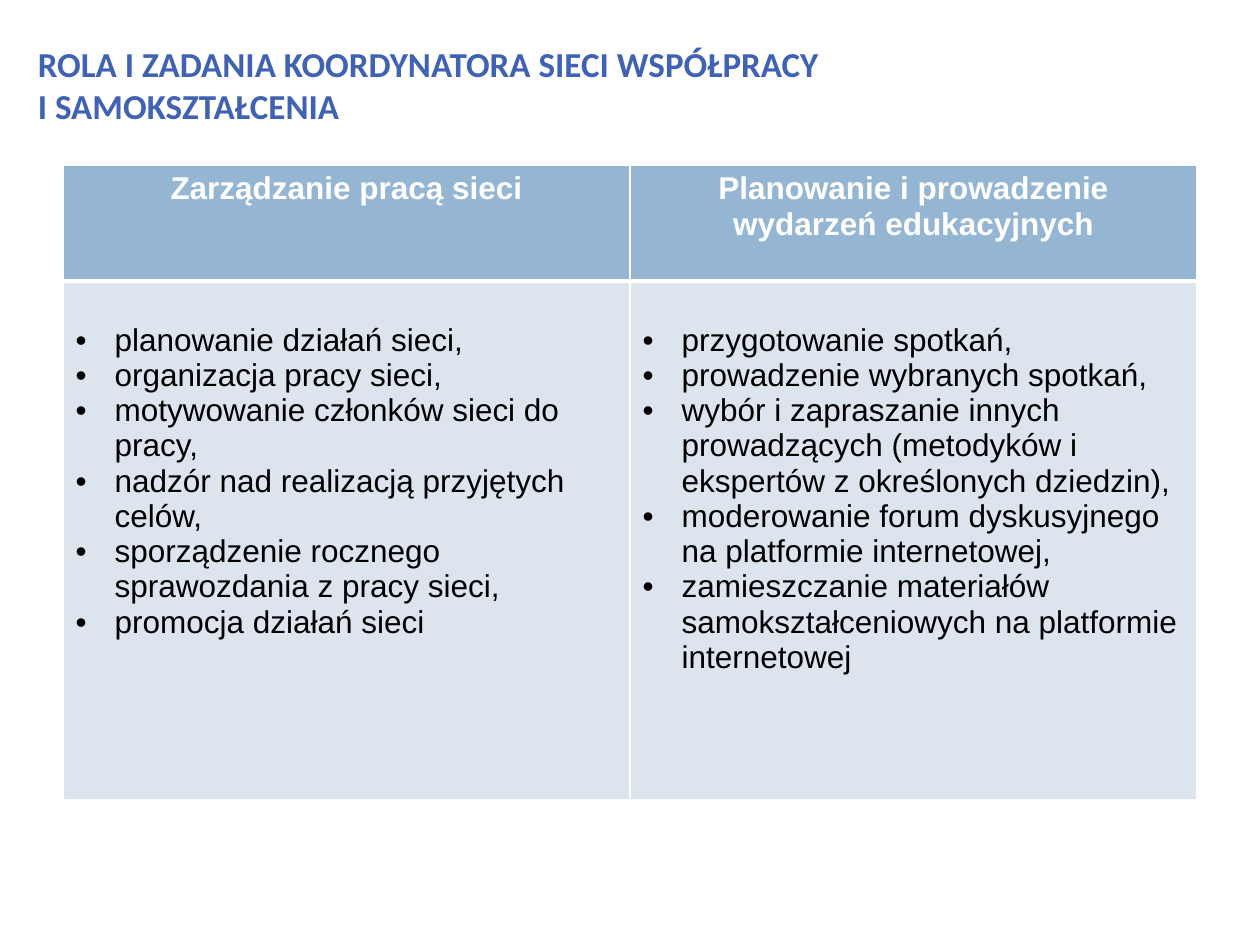
from lxml.etree import SubElement
from pptx import Presentation
from pptx.dml.color import RGBColor
from pptx.enum.text import MSO_ANCHOR, PP_ALIGN
from pptx.oxml.ns import qn
from pptx.util import Inches, Pt

TITLE = ["ROLA I ZADANIA KOORDYNATORA SIECI WSPÓŁPRACY", "I SAMOKSZTAŁCENIA"]
COLUMNS = [
    ("Zarządzanie pracą sieci", [
        "planowanie działań sieci,",
        "organizacja pracy sieci,",
        "motywowanie członków sieci do pracy,",
        "nadzór nad realizacją przyjętych celów,",
        "sporządzenie rocznego sprawozdania z pracy sieci,",
        "promocja działań sieci",
    ]),
    ("Planowanie i prowadzenie wydarzeń edukacyjnych", [
        "przygotowanie spotkań,",
        "prowadzenie wybranych spotkań,",
        "wybór i zapraszanie innych prowadzących (metodyków i ekspertów z określonych dziedzin),",
        "moderowanie forum dyskusyjnego na platformie internetowej,",
        "zamieszczanie materiałów samokształceniowych na platformie internetowej",
    ]),
]
ROWS = [0.92, 4.12]
WIDTH = 4.5
INDENT = 0.31


def paint(fill, color):
    fill.solid()
    fill.fore_color.rgb = RGBColor.from_string(color)


def write(para, text, size, name, color, bold):
    run = para.add_run()
    run.text = text
    font = run.font
    font.size, font.name, font.bold = Pt(size), name, bold
    paint(font.fill, color)


def border(cell, sides):
    props = cell._tc.get_or_add_tcPr()
    for side, width in sides.items():
        line = SubElement(props, qn(f"a:ln{side}"), w=str(Pt(width)))
        solid = SubElement(line, qn("a:solidFill"))
        SubElement(solid, qn("a:srgbClr"), val="FFFFFF")


def bullet(para):
    props = para._p.get_or_add_pPr()
    props.set("marL", str(Inches(INDENT)))
    props.set("indent", str(-Inches(INDENT)))
    SubElement(props, qn("a:buFont"), typeface="Arial")
    SubElement(props, qn("a:buChar"), char="•")


def add_title(slide):
    title = slide.shapes.title
    title.left, title.top = Inches(0.2), Inches(0.29)
    title.width, title.height = Inches(7.8), Inches(0.87)
    frame = title.text_frame
    frame.word_wrap = True
    frame.vertical_anchor = MSO_ANCHOR.TOP
    para = frame.paragraphs[0]
    para.alignment = PP_ALIGN.LEFT
    for i, line in enumerate(TITLE):
        if i:
            para.add_line_break()
        write(para, line, 20, "Calibri", "4062B3", True)


def add_tasks(slide):
    table = slide.shapes.add_table(
        len(ROWS), len(COLUMNS), Inches(0.5), Inches(1.31),
        Inches(WIDTH * len(COLUMNS)), Inches(sum(ROWS))).table
    for row, height in zip(table.rows, ROWS):
        row.height = Inches(height)
    for col, (head, tasks) in enumerate(COLUMNS):
        table.columns[col].width = Inches(WIDTH)
        top, body = table.cell(0, col), table.cell(1, col)
        border(top, {"L": 1, "R": 1, "T": 1, "B": 3})
        border(body, {"L": 1, "R": 1, "T": 3, "B": 1})
        paint(top.fill, "94B6D2")
        paint(body.fill, "DCE5EE")
        para = top.text_frame.paragraphs[0]
        para.alignment = PP_ALIGN.CENTER
        write(para, head, 18, "Arial", "FFFFFF", True)
        body.margin_top = Inches(0.33)
        frame = body.text_frame
        for i, task in enumerate(tasks):
            para = frame.add_paragraph() if i else frame.paragraphs[0]
            bullet(para)
            write(para, task, 18, "Arial", "000000", False)


def main():
    """Build the slide on the coordinator's role and tasks."""
    deck = Presentation()
    deck.slide_width, deck.slide_height = Inches(10), Inches(7.5)
    slide = deck.slides.add_slide(deck.slide_layouts[5])
    add_title(slide)
    add_tasks(slide)
    deck.save("out.pptx")


if __name__ == "__main__":
    main()
